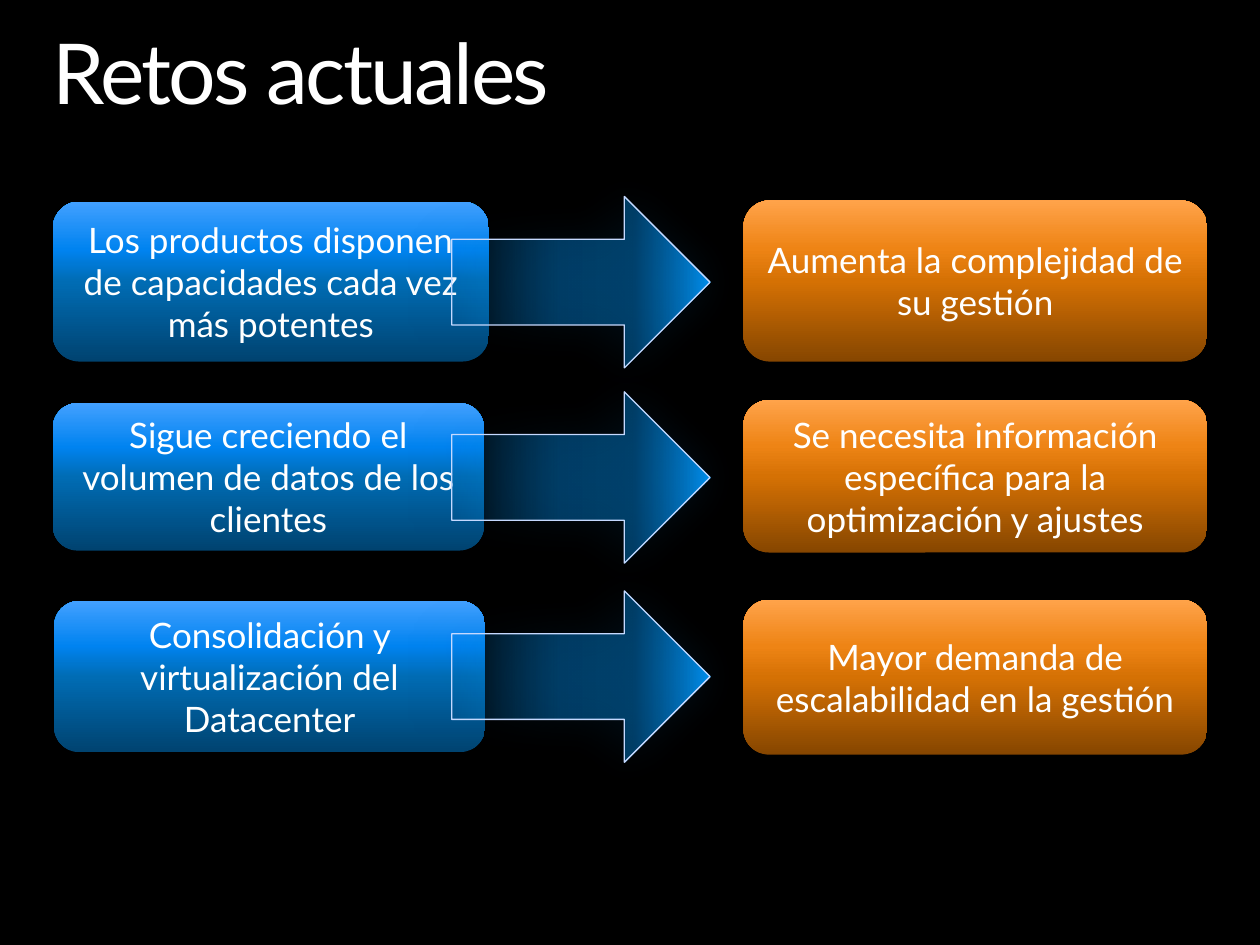
from lxml import etree
from pptx import Presentation
from pptx.dml.color import RGBColor
from pptx.enum.shapes import MSO_SHAPE
from pptx.enum.text import MSO_ANCHOR, PP_ALIGN
from pptx.oxml.ns import qn
from pptx.util import Inches, Pt

ROUND, ARROW = MSO_SHAPE.ROUNDED_RECTANGLE, MSO_SHAPE.UP_ARROW
TOP, MIDDLE = MSO_ANCHOR.TOP, MSO_ANCHOR.MIDDLE
LEFT, CENTER = PP_ALIGN.LEFT, PP_ALIGN.CENTER
WIDE, HIGH = 10, 7.5
EDGE = 0.42
PITCH = 1.585
COLORS = {"back": "000000", "text": "FFFFFF", "line": "C5D9FF", "glow": "004C80"}
BLUE = [(0, "004370", 100), (50, "006CB4", 100), (70, "0083F0", 100), (100, "42A0FF", 100)]
ORANGE = [(0, "864600", 100), (50, "D57104", 100), (70, "EE8415", 100), (100, "FFA34A", 100)]
FADE = [(0, "0099FF", 0), (42, "0073BF", 49), (70, "0073BF", 51), (99, "0099FF", 91)]
DROP = ("back", 45, 5, 3, 90)
HALO = ("glow", 29, 26, 3, 180)
ROWS = [
    ("Los productos disponen de capacidades cada vez más potentes", (EDGE, 1.6, 3.46, 1.27),
     "Aumenta la complejidad de su gestión", 1.28, 2.24),
    ("Sigue creciendo el volumen de datos de los clientes", (EDGE, 3.2, 3.42, 1.17),
     "Se necesita información específica para la optimización y ajustes", 1.21, 3.79),
    ("Consolidación y virtualización del Datacenter", (0.43, 4.77, 3.42, 1.2),
     "Mayor demanda de escalabilidad en la gestión", 1.23, 5.37),
]


def tint(node, color, alpha):
    """Add a colour with its opacity in percent."""
    item = etree.SubElement(node, qn("a:srgbClr"), val=color)
    etree.SubElement(item, qn("a:alpha"), val=str(alpha * 1000))


def blend(shape, stops):
    """Fill a shape from bottom to top with gradient stops."""
    shape.fill.gradient()
    shape.fill.gradient_angle = 90
    items = shape._element.spPr.find(".//" + qn("a:gsLst"))
    for old in list(items):
        items.remove(old)
    for pos, color, alpha in stops:
        stop = etree.SubElement(items, qn("a:gs"), pos=str(pos * 1000))
        tint(stop, color, alpha)


def shade(shape, color, alpha, blur, dist, angle):
    """Give a shape an outer shadow."""
    shape.shadow.inherit = False
    effects = shape._element.spPr.find(qn("a:effectLst"))
    outer = etree.SubElement(effects, qn("a:outerShdw"), blurRad=str(Pt(blur)),
                             dist=str(Pt(dist)), dir=str(angle * 60000),
                             algn="ctr", rotWithShape="0")
    tint(outer, COLORS[color], alpha)


def write(shape, text, size=20, align=CENTER, anchor=MIDDLE, color="text"):
    """Write one formatted paragraph and return it."""
    frame = shape.text_frame
    frame.word_wrap = True
    frame.vertical_anchor = anchor
    para = frame.paragraphs[0]
    para.alignment = align
    run = para.add_run()
    run.text = text
    run.font.size = Pt(size)
    run.font.name = "Lato"
    run.font.color.rgb = RGBColor.from_string(COLORS[color])
    return para


def draw(group, kind, area, stops, shadow):
    """Add a gradient shape with a shadow to a group."""
    shape = group.shapes.add_shape(kind, *map(Inches, area))
    blend(shape, stops)
    shape.line.fill.background()
    shade(shape, *shadow)
    return shape


def point(group, middle):
    """Add the fading arrow centred on a row."""
    wide, tall = 1.36, 2.05
    arrow = draw(group, ARROW, (3.93, middle - tall / 2, wide, tall), FADE, HALO)
    arrow.rotation = 90
    arrow.line.color.rgb = RGBColor.from_string(COLORS["line"])
    arrow.line.width = Pt(0.75)


def head(slide, text):
    """Set the slide title in its placeholder."""
    title = slide.shapes.title
    area = (EDGE, HIGH / 30, WIDE - 2 * EDGE, 0.73)
    title.left, title.top, title.width, title.height = map(Inches, area)
    frame = title.text_frame
    frame.margin_left = frame.margin_top = frame.margin_right = frame.margin_bottom = 0
    para = write(title, text, size=48, align=LEFT, anchor=TOP)
    para.line_spacing = 0.9
    para.runs[0].font._element.set("spc", "-150")


def main():
    """Build and save the slide."""
    deck = Presentation()
    deck.slide_width, deck.slide_height = Inches(WIDE), Inches(HIGH)
    slide = deck.slides.add_slide(deck.slide_layouts[5])
    fill = slide.background.fill
    fill.solid()
    fill.fore_color.rgb = RGBColor.from_string(COLORS["back"])
    head(slide, "Retos actuales")
    for row, (cause, area, effect, tall, middle) in enumerate(ROWS):
        group = slide.shapes.add_group_shape()
        write(draw(group, ROUND, area, BLUE, DROP), cause)
        goal = (5.9, 1.59 + row * PITCH, 3.68, tall)
        write(draw(group, ROUND, goal, ORANGE, DROP), effect)
        point(group, middle)
    deck.save("out.pptx")


if __name__ == "__main__":
    main()
